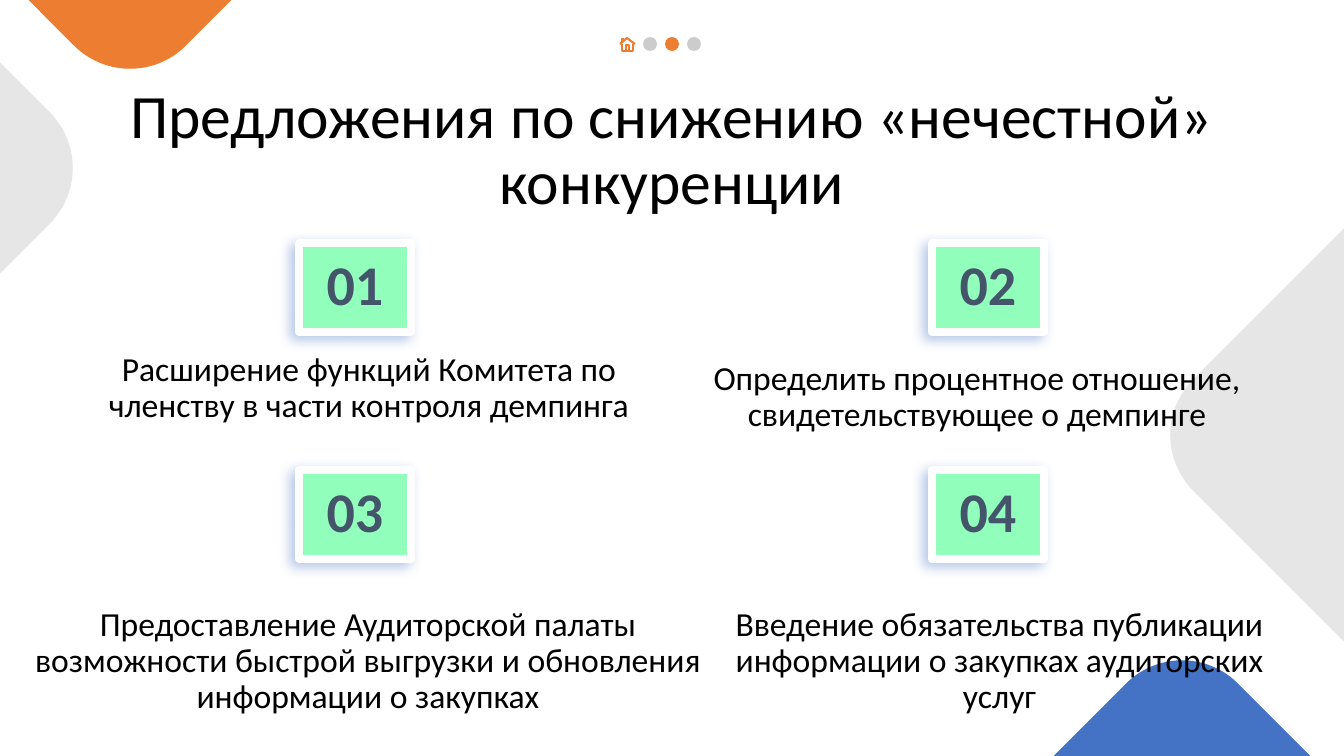
from lxml import etree
from pptx import Presentation
from pptx.dml.color import RGBColor
from pptx.enum.shapes import MSO_SHAPE
from pptx.enum.text import MSO_ANCHOR, PP_ALIGN
from pptx.oxml.ns import qn
from pptx.util import Pt

RECT, ROUND, OVAL = MSO_SHAPE.RECTANGLE, MSO_SHAPE.ROUNDED_RECTANGLE, MSO_SHAPE.OVAL
TOP, MIDDLE, BOTTOM = MSO_ANCHOR.TOP, MSO_ANCHOR.MIDDLE, MSO_ANCHOR.BOTTOM
CENTER = PP_ALIGN.CENTER

SCALE = 914400 / 100.8
FONT = "Calibri"
COLORS = {
    "orange": "ED7D31", "blue": "4472C4", "pale": "E7E6E6", "dot": "B0B0B0",
    "mint": "91FFBB", "slate": "44546A", "white": "FFFFFF", "black": "000000",
}

TITLE = "Предложения по снижению «нечестной» конкуренции"
TITLE_BOX = (106, 72, 1132, 92)

# caption, box (left, top, width, height)
ITEMS = [
    ("Расширение функций Комитета по членству в части контроля демпинга",
     (81, 365, 576, 73)),
    ("Определить процентное отношение, свидетельствующее о демпинге",
     (657, 374, 640, 73)),
    ("Предоставление Аудиторской палаты возможности быстрой выгрузки "
     "и обновления информации о закупках", (0, 656, 736, 73)),
    ("Введение обязательства публикации информации о закупках "
     "аудиторских услуг", (687, 656, 625, 73)),
]
BADGE_LEFT, BADGE_TOP, BADGE_SIZE = (299, 932), (243, 470), (112, 89)

# centre x, centre y, colour
DIAMONDS = [(130, -233, "orange"), (1472, 435, "pale"),
            (-229, 168, "pale"), (1182, 962, "blue")]
SIDE = 473

DOTS = [("dot", 64), ("orange", 100), ("dot", 64)]
DOT_LEFT, DOT_TOP, DOT_SIZE, DOT_STEP = 643, 37, 14, 22

HOUSE = [
    [(620, 44), (627, 38), (635, 44)],
    [(622, 44), (622, 51), (633, 51), (633, 44)],
    [(626, 51), (626, 45), (629, 45), (629, 51)],
    [(622, 42), (622, 39), (624, 39)],
]


def emu(px):
    return round(px * SCALE)


def rgb(name):
    return RGBColor.from_string(COLORS[name])


def add_color(parent, name, alpha):
    color = etree.SubElement(parent, qn("a:srgbClr"), val=COLORS[name])
    etree.SubElement(color, qn("a:alpha"), val=str(alpha * 1000))


def add_shape(kind, box, color, alpha=100):
    shape = slide.shapes.add_shape(kind, *map(emu, box))
    shape.shadow.inherit = False
    shape.line.fill.background()
    shape.fill.solid()
    shape.fill.fore_color.rgb = rgb(color)
    if alpha < 100:
        fill = shape.fill._xPr.find(qn("a:solidFill"))
        fill.clear()
        add_color(fill, color, alpha)
    return shape


def add_glow(shape):
    """Give the shape a soft blue shadow towards the lower left."""
    effects = shape._element.spPr.find(qn("a:effectLst"))
    shadow = etree.SubElement(
        effects, qn("a:outerShdw"), blurRad=str(Pt(9)), dist=str(Pt(4.5)),
        dir=str(140 * 60000), algn="ctr", rotWithShape="0")
    add_color(shadow, "blue", 40)


def write(text, box=None, shape=None, size=24, color="black", bold=False,
          anchor=BOTTOM):
    """Put centred text in the shape, or in a new text box."""
    if shape is None:
        shape = slide.shapes.add_textbox(*map(emu, box))
    frame = shape.text_frame
    frame.word_wrap = True
    frame.vertical_anchor = anchor
    frame.margin_left = frame.margin_right = emu(13)
    frame.margin_top = frame.margin_bottom = emu(13)
    para = frame.paragraphs[0]
    para.alignment = CENTER
    para.line_spacing = 0.9
    run = para.add_run()
    run.text = text
    font = run.font
    font.name, font.size, font.bold = FONT, Pt(size), bold
    font.color.rgb = rgb(color)


def add_house():
    first, *rest = HOUSE
    pen = slide.shapes.build_freeform(*first[0], scale=SCALE)
    pen.add_line_segments(first[1:], close=False)
    for line in rest:
        pen.move_to(*line[0])
        pen.add_line_segments(line[1:], close=False)
    house = pen.convert_to_shape()
    house.shadow.inherit = False
    house.fill.background()
    house.line.color.rgb = rgb("orange")
    house.line.width = Pt(1.5)


deck = Presentation()
deck.slide_width, deck.slide_height = emu(1344), emu(756)
slide = deck.slides.add_slide(deck.slide_layouts[6])

for x, y, color in DIAMONDS:
    diamond = add_shape(ROUND, (x - SIDE / 2, y - SIDE / 2, SIDE, SIDE), color)
    diamond.adjustments[0] = 0.167
    diamond.rotation = 315

write(TITLE, TITLE_BOX, size=44, anchor=TOP)

for i, (caption, box) in enumerate(ITEMS):
    row, col = divmod(i, 2)
    badge = add_shape(RECT, (BADGE_LEFT[col], BADGE_TOP[row], *BADGE_SIZE), "mint")
    badge.line.color.rgb = rgb("white")
    badge.line.width = Pt(6)
    add_glow(badge)
    write(f"{i + 1:02}", shape=badge, size=40, color="slate", bold=True,
          anchor=MIDDLE)
    write(caption, box)

for i, (color, alpha) in enumerate(DOTS):
    add_shape(OVAL, (DOT_LEFT + i * DOT_STEP, DOT_TOP, DOT_SIZE, DOT_SIZE),
              color, alpha)
add_house()

deck.save("out.pptx")
